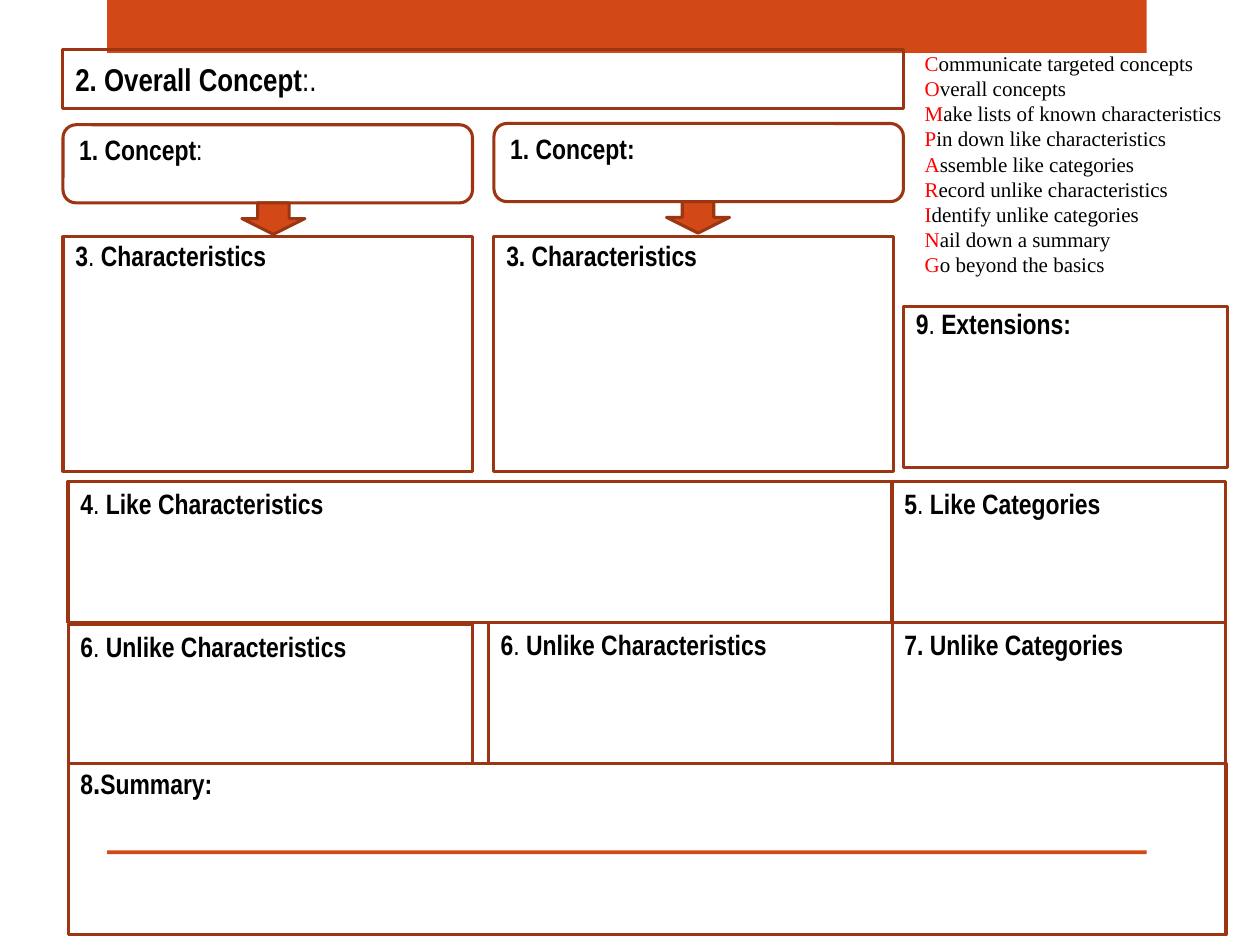
from dataclasses import dataclass
from pptx import Presentation
from pptx.dml.color import RGBColor
from pptx.enum.shapes import MSO_SHAPE as Kind
from pptx.enum.text import MSO_ANCHOR as Anchor, PP_ALIGN as Align
from pptx.util import Pt


@dataclass(frozen=True)
class Theme:
    """Colours, fonts and type sizes of the slide."""
    fill: RGBColor = RGBColor(0xD3, 0x48, 0x17)
    edge: RGBColor = RGBColor(0x9C, 0x35, 0x11)
    ink: RGBColor = RGBColor(0, 0, 0)
    key: RGBColor = RGBColor(0xFF, 0, 0)
    head: str = "Arial Narrow"
    body: str = "Times New Roman"
    big: int = 18
    mid: int = 16
    small: int = 12
    line: float = 1.75


THEME = Theme()
STEPS = (
    "Communicate targeted concepts",
    "Overall concepts",
    "Make lists of known characteristics",
    "Pin down like characteristics",
    "Assemble like categories",
    "Record unlike characteristics",
    "Identify unlike categories",
    "Nail down a summary",
    "Go beyond the basics",
)


def draw(slide, kind, box, fill=None, edge=THEME.edge):
    """Add a flat preset shape in a box of left, top, width and height."""
    shape = slide.shapes.add_shape(kind, *map(Pt, box))
    shape.shadow.inherit = False
    if fill is None:
        shape.fill.background()
    else:
        shape.fill.solid()
        shape.fill.fore_color.rgb = fill
    if edge is None:
        shape.line.fill.background()
    else:
        shape.line.color.rgb = edge
        shape.line.width = Pt(THEME.line)
    return shape


def style(para, face, size, bold=False):
    """Set the font of a paragraph."""
    para.alignment = Align.LEFT
    font = para.font
    font.name, font.size, font.bold = face, Pt(size), bold
    font.color.rgb = THEME.ink


def panel(slide, box, label, inset=3, kind=Kind.RECTANGLE,
          size=THEME.mid, anchor=Anchor.TOP):
    """Add a framed field; bars in its label switch bold off and on."""
    frame = draw(slide, kind, box).text_frame
    frame.word_wrap = True
    frame.vertical_anchor = anchor
    frame.margin_top = Pt(inset)
    para = frame.paragraphs[0]
    style(para, THEME.head, size, True)
    for spot, part in enumerate(label.split("|")):
        run = para.add_run()
        run.text = part
        if spot % 2:
            run.font.bold = False
    return para


def bands(slide, box):
    """Add the top band and the thin rule near the foot."""
    left, top, width, height = box
    for down, tall in ((0, 30.24), (height - 2.16, 2.16)):
        draw(slide, Kind.RECTANGLE, (left, top + down, width, tall),
             THEME.fill, None)


def guide(slide, box):
    """Add the list of steps with coloured initials."""
    frame = slide.shapes.add_textbox(*map(Pt, box)).text_frame
    frame.word_wrap = True
    for spot, step in enumerate(STEPS):
        para = frame.add_paragraph() if spot else frame.paragraphs[0]
        style(para, THEME.body, THEME.small)
        para.line_spacing = Pt(14.4)
        first, rest = para.add_run(), para.add_run()
        first.text, rest.text = step[0], step[1:]
        first.font.color.rgb = THEME.key


def column(slide, box, labels, wide, shift):
    """Add a concept, an arrow and the field of its characteristics."""
    left, top, width, height = box
    tall, low = 44.64, 133.92
    panel(slide, (left, top, wide, tall), labels[0], 2.4,
          Kind.ROUNDED_RECTANGLE)
    draw(slide, Kind.DOWN_ARROW, (left + shift, top + tall, 36, 18),
         THEME.fill)
    panel(slide, (left, top + height - low, width, low), labels[1], 1)


def grid(slide, box):
    """Add the fields that compare the concepts and the summary."""
    left, top, width, height = box
    row, half, side = 80.64, 231.12, 190.8
    last = left + width - side
    next_row, foot = top + row, top + 2 * row
    panel(slide, (left, top, width - side, row), "4|. |Like Characteristics")
    panel(slide, (last, top, side, row), "5|. |Like Categories")
    unlike = "6|. |Unlike Characteristics"
    panel(slide, (left, next_row + 1.2, half, row - 1.2), unlike)
    panel(slide, (last - half + 0.4, next_row, half, row), unlike)
    panel(slide, (last, next_row, side, row), "7. Unlike Categories")
    para = panel(slide, (left, foot, width, height - 2 * row),
                 "8|.|Summary:", 0)
    dot = para.runs[1].font
    dot.bold, dot.size = True, Pt(THEME.big)


def main():
    """Build and save the slide."""
    deck = Presentation()
    deck.slide_width, deck.slide_height = Pt(720), Pt(540)
    slide = deck.slides.add_slide(deck.slide_layouts[6])
    bands(slide, (61.2, 0, 594, 488.16))
    panel(slide, (36, 28.08, 480.24, 33.84), "2. Overall Concept|:.",
          3.6, size=THEME.big, anchor=Anchor.MIDDLE)
    guide(slide, (521.28, 25.2, 193, 138.24))
    column(slide, (36, 71.28, 234, 198),
           ("1. Concept|:", "3|. |Characteristics"), 234, 102.24)
    column(slide, (282.24, 70.56, 228.24, 198.72),
           ("1. Concept:", "3. Characteristics"), 234, 98.64)
    panel(slide, (516.24, 174.96, 185.04, 92.16), "9|. |Extensions:", 0)
    grid(slide, (38.88, 275.04, 661.68, 259.2))
    deck.save("out.pptx")


if __name__ == "__main__":
    main()
